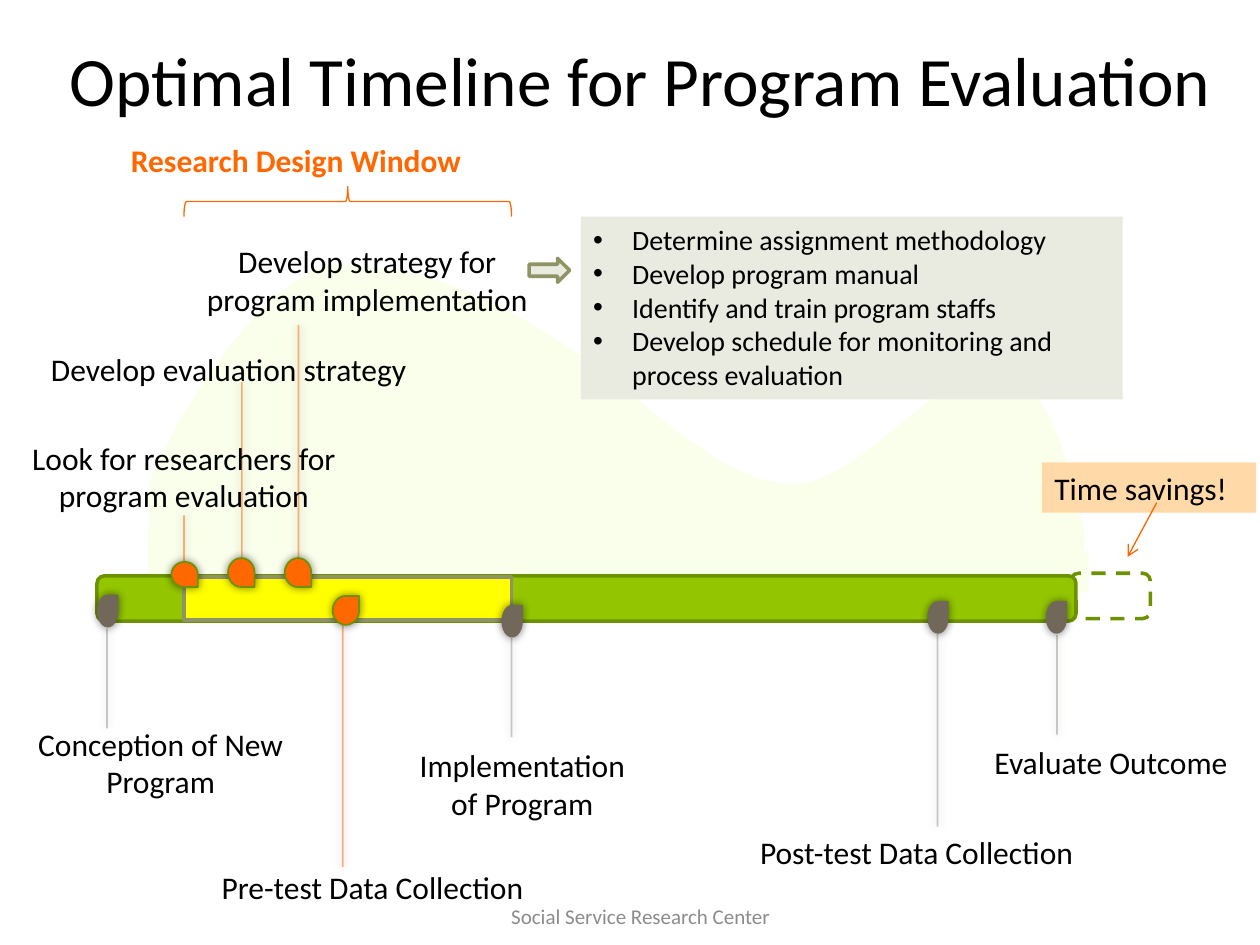
from lxml import etree
from pptx import Presentation
from pptx.dml.color import RGBColor
from pptx.enum.dml import MSO_LINE
from pptx.enum.shapes import MSO_CONNECTOR, MSO_SHAPE
from pptx.enum.text import MSO_ANCHOR, PP_ALIGN
from pptx.oxml.ns import qn
from pptx.util import Inches, Pt

CENTER, LEFT, RIGHT = PP_ALIGN.CENTER, PP_ALIGN.LEFT, PP_ALIGN.RIGHT
TOP, MIDDLE, BOTTOM = MSO_ANCHOR.TOP, MSO_ANCHOR.MIDDLE, MSO_ANCHOR.BOTTOM
RECT, ROUNDED, TEARDROP = MSO_SHAPE.RECTANGLE, MSO_SHAPE.ROUNDED_RECTANGLE, MSO_SHAPE.TEAR
BRACE, ARROW = MSO_SHAPE.LEFT_BRACE, MSO_SHAPE.RIGHT_ARROW
STRAIGHT, DASH = MSO_CONNECTOR.STRAIGHT, MSO_LINE.DASH
BLACK, GREY, ORANGE, GREEN, OLIVE, PALE = "000000", "71685A", "FF6700", "6D9200", "909465", "E9EAE0"

HILL_START = (8.61, 4.23)
HILL_CURVES = [
    (8.53, 3.96, 8.38, 2.95, 7.9, 2.95), (7.36, 2.97, 6.82, 3.87, 6.25, 3.84),
    (5.69, 3.81, 5.09, 3.14, 4.52, 2.76), (3.94, 2.37, 3.37, 2.11, 2.7, 2.1),
    (2.04, 2.1, 1.18, 3.71, 1.18, 3.87), (1.19, 4.15, 1.15, 4.64, 1.21, 4.72),
    (1.13, 4.63, 2.45, 4.65, 3.06, 4.64), (3.67, 4.63, 4.27, 4.67, 4.88, 4.67),
    (5.49, 4.68, 5.68, 4.69, 6.71, 4.69), (7.73, 4.69, 8.62, 4.72, 8.64, 4.69),
    (8.65, 3.9, 8.6, 4.78, 8.61, 4.23),
]

GREY_DROP = {"size": (0.17, 0.26), "fill": GREY, "opacity": 35}
ORANGE_DROP = {"size": (0.21, 0.23), "fill": ORANGE, "line": GREEN, "opacity": 50}
UPPER_DROP = {**ORANGE_DROP, "flip": True}
MILESTONES = [
    ("Conception of New Program", (-0.01, 5.69, 2.57, 0.71), CENTER, (0.85, 4.99, 5.78), (0.77, 4.72), GREY_DROP),
    ("Implementation of Program", (3.12, 5.86, 2.05, 0.71), CENTER, (4.06, 5.06, 5.85), (3.98, 4.8), GREY_DROP),
    ("Evaluate Outcome", (7.52, 5.85, 2.32, 0.4), RIGHT, (8.39, 5.04, 5.83), (8.3, 4.77), GREY_DROP),
    ("Post-test Data Collection", (5.86, 6.56, 2.83, 0.4), CENTER, (7.44, 5.03, 6.56), (7.36, 4.77), GREY_DROP),
    ("Develop evaluation strategy", (0.08, 2.42, 3.47, 0.71), CENTER, (1.92, 4.47, 3.03), (1.81, 4.43), UPPER_DROP),
    ("Develop strategy for program implementation", (1.46, 1.86, 2.91, 0.71), CENTER,
     (2.37, 4.55, 2.58), (2.26, 4.43), UPPER_DROP),
    ("Pre-test Data Collection ", (1.25, 6.53, 3.47, 0.71), CENTER, (2.72, 6.88, 4.75), (2.64, 4.73), ORANGE_DROP),
    ("Look for researchers for program evaluation", (0.08, 3.42, 2.76, 0.71), CENTER,
     (1.46, 4.56, 4.09), (1.36, 4.46), {**UPPER_DROP, "size": (0.21, 0.2)}),
]
PREPARATIONS = [
    "Determine assignment methodology",
    "Develop program manual",
    "Identify and train program staffs",
    "Develop schedule for monitoring and process evaluation",
]


def color(hex_string):
    """Turn a hex string into a colour."""
    return RGBColor.from_string(hex_string)


def inches(lengths):
    """Convert a sequence of numbers to inches."""
    return [Inches(length) for length in lengths]


def add_node(parent, tag, **attributes):
    """Append a DrawingML element with the given attributes."""
    node = etree.SubElement(parent, qn(f"a:{tag}"))
    for key, value in attributes.items():
        node.set(key, str(value))
    return node


def set_effects(part, glow=False, opacity=None):
    """Set paint opacity, then replace the theme shadow by none or a soft glow."""
    properties = part.element.spPr
    if opacity:
        for paint in properties.iter(qn("a:srgbClr")):
            add_node(paint, "alpha", val=opacity * 1000)
    effects = add_node(properties, "effectLst")
    if glow:
        shadow = add_node(effects, "outerShdw", blurRad=Pt(5), dist=0, dir=0, rotWithShape=0)
        add_node(add_node(shadow, "srgbClr", val=BLACK), "alpha", val=50000)


def add_figure(slide, kind, box, fill=None, line=None, width=1, dash=None, glow=False):
    """Add a preset shape with its fill and outline."""
    figure = slide.shapes.add_shape(kind, *inches(box))
    if fill:
        figure.fill.solid()
        figure.fill.fore_color.rgb = color(fill)
    else:
        figure.fill.background()
    if line:
        figure.line.color.rgb = color(line)
        figure.line.width = Pt(width)
        if dash:
            figure.line.dash_style = dash
    else:
        figure.line.fill.background()
    set_effects(figure, glow)
    return figure


def add_line(slide, start, end, line, width=1, glow=False, opacity=None, head=False):
    """Add a straight connector, with an arrowhead if wanted."""
    connector = slide.shapes.add_connector(STRAIGHT, *inches(start + end))
    connector.line.color.rgb = color(line)
    connector.line.width = Pt(width)
    if head:
        add_node(connector.line._get_or_add_ln(), "tailEnd", type="arrow")
    set_effects(connector, glow, opacity)


def write(holder, lines, align=LEFT, anchor=TOP, size=18, ink=BLACK, bold=False):
    """Write formatted paragraphs into a shape."""
    frame = holder.text_frame
    frame.word_wrap = True
    frame.vertical_anchor = anchor
    frame.text = "\n".join(lines)
    font_format = {"name": "Calibri", "size": Pt(size), "bold": bold}
    for paragraph in frame.paragraphs:
        paragraph.alignment = align
        for key, value in font_format.items():
            setattr(paragraph.runs[0].font, key, value)
        paragraph.runs[0].font.color.rgb = color(ink)


def add_caption(slide, text, box, align=LEFT, **text_format):
    """Add a text box holding one caption."""
    write(slide.shapes.add_textbox(*inches(box)), [text], align, **text_format)


def add_title(slide, text, box):
    """Move and fill the title placeholder."""
    title = slide.shapes.title
    title.left, title.top, title.width, title.height = inches(box)
    write(title, [text], CENTER, MIDDLE, size=39.6)


def add_hill(slide, start, curves):
    """Draw the pale hill, bending each segment into a cubic curve."""
    builder = slide.shapes.build_freeform(*inches(start), scale=1.0)
    builder.add_line_segments([inches(curve[4:]) for curve in curves], close=True)
    hill = builder.convert_to_shape()
    segments = list(hill.element.spPr.iter(qn("a:lnTo")))
    for segment, curve in zip(segments, curves):
        bend = etree.Element(qn("a:cubicBezTo"))
        for x, y in zip(curve[::2], curve[1::2]):
            add_node(bend, "pt", x=Inches(x) - hill.left, y=Inches(y) - hill.top)
        segment.getparent().replace(segment, bend)
    hill.fill.solid()
    hill.fill.fore_color.rgb = color("EFFFC1")
    hill.line.fill.background()
    set_effects(hill, opacity=31)


def add_timeline(slide, box):
    """Draw the saved time, the program bar and the design window on it."""
    left, top, width, height = box
    add_figure(slide, ROUNDED, (left + 7.73, top - 0.02, 0.63, height), line=GREEN, width=2, dash=DASH)
    add_figure(slide, ROUNDED, box, "94C600", GREEN, 2)
    add_figure(slide, RECT, (left + 0.69, top + 0.01, 2.6, height - 0.02), "FFFF00", OLIVE, 2)


def add_milestone(slide, text, box, align, stem, corner, style):
    """Place a caption, its stem and its drop on the timeline."""
    x, start, end = stem
    add_caption(slide, text, box, align, anchor=BOTTOM)
    add_line(slide, (x, start), (x, end), style["fill"], glow=True, opacity=style["opacity"])
    drop = add_figure(slide, TEARDROP, corner + style["size"], style["fill"], style.get("line"), glow=True)
    if style.get("flip"):
        drop.element.spPr.xfrm.set("flipV", "1")


def add_design_window(slide, box):
    """Place the window heading above its brace."""
    left, top, width, height = box
    add_caption(slide, "Research Design Window", box, ink=ORANGE, bold=True)
    brace = add_figure(slide, BRACE, (left + 1.7, top - 0.77, 0.24, 2.6), line=ORANGE, width=0.75)
    brace.rotation = 90


def add_preparations(slide, box, items):
    """Place the bulleted panel and the arrow leading to it."""
    left, top, width, height = box
    panel = add_figure(slide, RECT, box, PALE)
    write(panel, items, size=16)
    for paragraph in panel.text_frame.paragraphs:
        properties = paragraph._p.get_or_add_pPr()
        properties.set("marL", str(Inches(0.31)))
        properties.set("indent", str(Inches(-0.31)))
        add_node(properties, "buFont", typeface="Arial")
        add_node(properties, "buChar", char="•")
    add_figure(slide, ARROW, (left - 0.41, top + 0.33, 0.32, 0.19), PALE, OLIVE, 2)


def add_savings(slide, box):
    """Place the savings note and its arrow."""
    left, top, width, height = box
    write(add_figure(slide, RECT, box, "FFD9A7"), ["Time savings!"])
    add_line(slide, (left + 0.91, top + 0.32), (left + 0.68, top + 0.75), "F96500", 0.75, head=True)


def main():
    """Build and save the slide."""
    deck = Presentation()
    deck.slide_width, deck.slide_height = inches((10, 7.5))
    slide = deck.slides.add_slide(deck.slide_layouts[5])
    add_hill(slide, HILL_START, HILL_CURVES)
    add_title(slide, "Optimal Timeline for Program Evaluation", (0.32, 0, 9.52, 1.25))
    add_timeline(slide, (0.77, 4.57, 7.77, 0.36))
    for milestone in MILESTONES:
        add_milestone(slide, *milestone)
    add_design_window(slide, (0.94, 1.07, 2.85, 0.4))
    add_preparations(slide, (4.61, 1.72, 4.3, 1.45), PREPARATIONS)
    add_savings(slide, (8.27, 3.67, 1.7, 0.4))
    add_caption(slide, "Social Service Research Center", (3.5, 7.07, 3.17, 0.4), CENTER,
                anchor=MIDDLE, size=12, ink="8C8C8C")
    deck.save("out.pptx")


if __name__ == "__main__":
    main()
